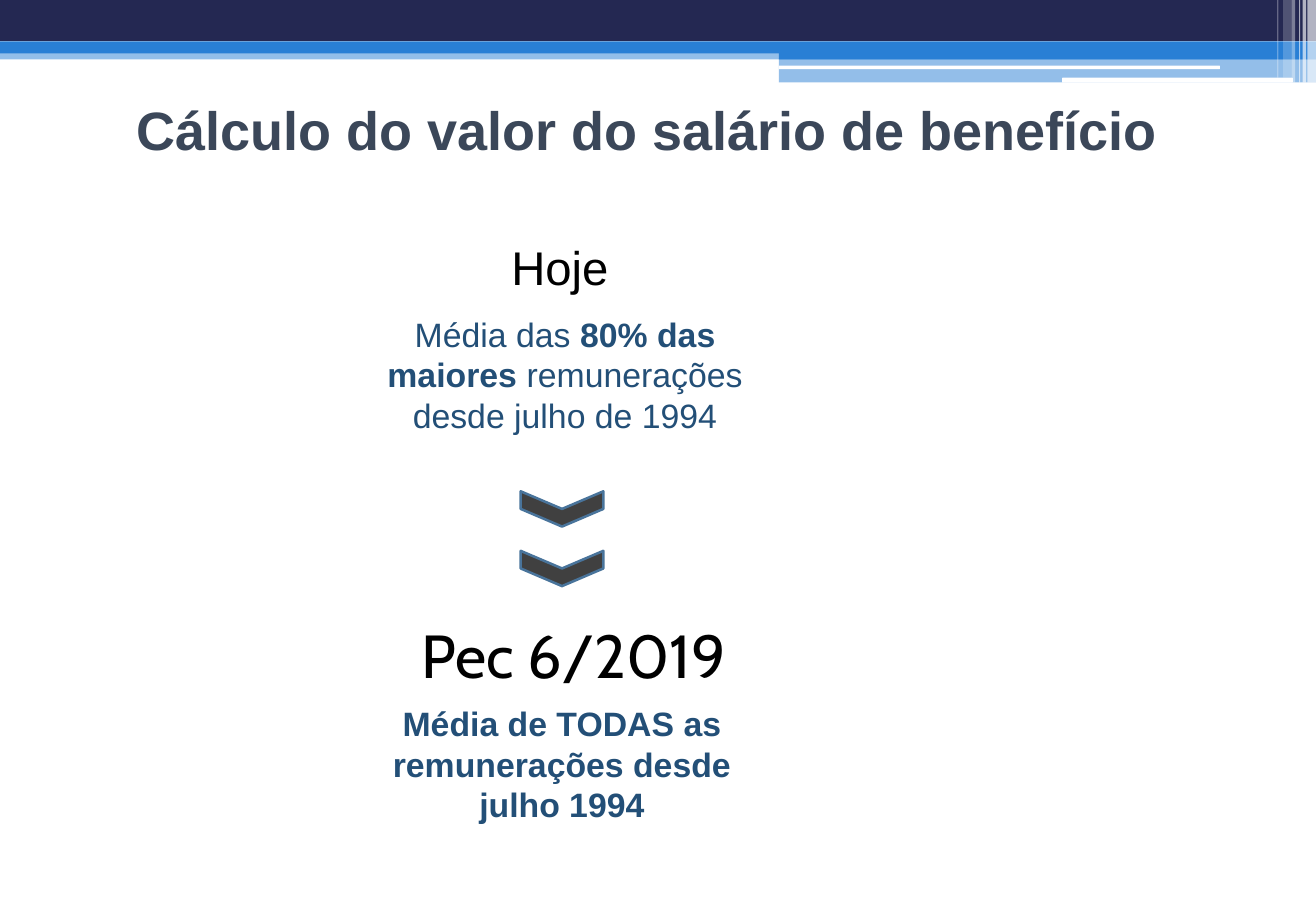
from dataclasses import dataclass

from lxml import etree
from pptx import Presentation
from pptx.dml.color import RGBColor
from pptx.enum.shapes import MSO_SHAPE
from pptx.enum.text import MSO_ANCHOR, PP_ALIGN
from pptx.oxml.ns import qn
from pptx.util import Emu, Pt

RECT = MSO_SHAPE.RECTANGLE
ROUND = MSO_SHAPE.ROUNDED_RECTANGLE
ARROW = MSO_SHAPE.CHEVRON
MIDDLE = MSO_ANCHOR.MIDDLE
TOP = MSO_ANCHOR.TOP
CENTER = PP_ALIGN.CENTER
LEFT = PP_ALIGN.LEFT
SCALE = 9144
WIDTH, HEIGHT = 1083, 750


@dataclass(frozen=True)
class Theme:
    navy: str = "242852"
    blue: str = "297FD5"
    white: str = "FFFFFF"
    black: str = "000000"
    slate: str = "3B4759"
    ink: str = "234F77"
    dark: str = "404040"
    edge: str = "49749B"
    font: str = "Arial"
    accent: str = "Cabin"
    title: int = 32
    large: int = 36
    head: int = 28
    body: int = 20


class Page:
    def __init__(self, slide, theme):
        self.slide = slide
        self.theme = theme

    def box(self, left, top, width, height):
        return [Emu(n * SCALE) for n in (left, top, width, height)]

    def shape(self, kind, area, color, alpha=100):
        item = self.slide.shapes.add_shape(kind, *self.box(*area))
        item.shadow.inherit = False
        item.fill.solid()
        item.fill.fore_color.rgb = RGBColor.from_string(color)
        item.line.fill.background()
        if alpha < 100:
            tint = item.fill._xPr.find(".//" + qn("a:srgbClr"))
            etree.SubElement(tint, qn("a:alpha")).set("val", str(alpha * 1000))
        return item

    def arrow(self, area):
        item = self.shape(ARROW, area, self.theme.dark)
        item.rotation = 90
        item.line.color.rgb = RGBColor.from_string(self.theme.edge)
        item.line.width = Pt(1.5)

    def text(self, area, parts, size, color, font=None, align=CENTER, anchor=TOP):
        frame = self.slide.shapes.add_textbox(*self.box(*area)).text_frame
        frame.word_wrap = True
        frame.vertical_anchor = anchor
        para = frame.paragraphs[0]
        para.alignment = align
        for words, bold in parts:
            run = para.add_run()
            run.text = words
            run.font.bold = bold
            run.font.size = Pt(size)
            run.font.name = font or self.theme.font
            run.font.color.rgb = RGBColor.from_string(color)


def main():
    deck = Presentation()
    deck.slide_width, deck.slide_height = Emu(WIDTH * SCALE), Emu(HEIGHT * SCALE)
    theme = Theme()
    page = Page(deck.slides.add_slide(deck.slide_layouts[6]), theme)

    bands = [
        ((0, 40, WIDTH, 9), theme.blue, 50),
        ((0, 0, WIDTH, 34), theme.navy, 100),
        ((0, 34, WIDTH, 10), theme.blue, 100),
        ((641, 39, 442, 10), theme.blue, 100),
        ((641, 48, 442, 20), theme.blue, 50),
    ]
    for area, color, alpha in bands:
        page.shape(RECT, area, color, alpha)

    for area in ((641, 54, 363, 3), (874, 64, 190, 4)):
        page.shape(ROUND, area, theme.white)

    stripes = [
        (1076, 7, 68, 65),
        (1072, 3, 68, 65),
        (1069, 1, 68, 60),
        (1063, 3, 68, 40),
        (1056, 7, 64, 20),
        (1051, 1, 64, 30),
    ]
    for left, width, height, alpha in stripes:
        page.shape(RECT, (left, 0, width, height), theme.white, alpha)

    page.text((25, 70, 1016, 73), [("Cálculo do valor do salário de benefício", True)],
              theme.title, theme.slate, anchor=MIDDLE)
    page.text((411, 191, 109, 57), [("Hoje", False)],
              theme.head, theme.black, align=LEFT)
    page.text((315, 504, 314, 71), [("Pec 6/2019", False)],
              theme.large, theme.black, font=theme.accent)
    today = [
        ("Média das ", False),
        ("80% das maiores ", True),
        ("remunerações desde julho de 1994", False),
    ]
    page.text((299, 253, 332, 111), today, theme.body, theme.ink)
    for top in (385, 434):
        page.arrow((448, top, 29, 68))
    page.text((279, 574, 367, 111),
              [("Média de TODAS as remunerações desde julho 1994", True)],
              theme.body, theme.ink)

    deck.save("out.pptx")


if __name__ == "__main__":
    main()
